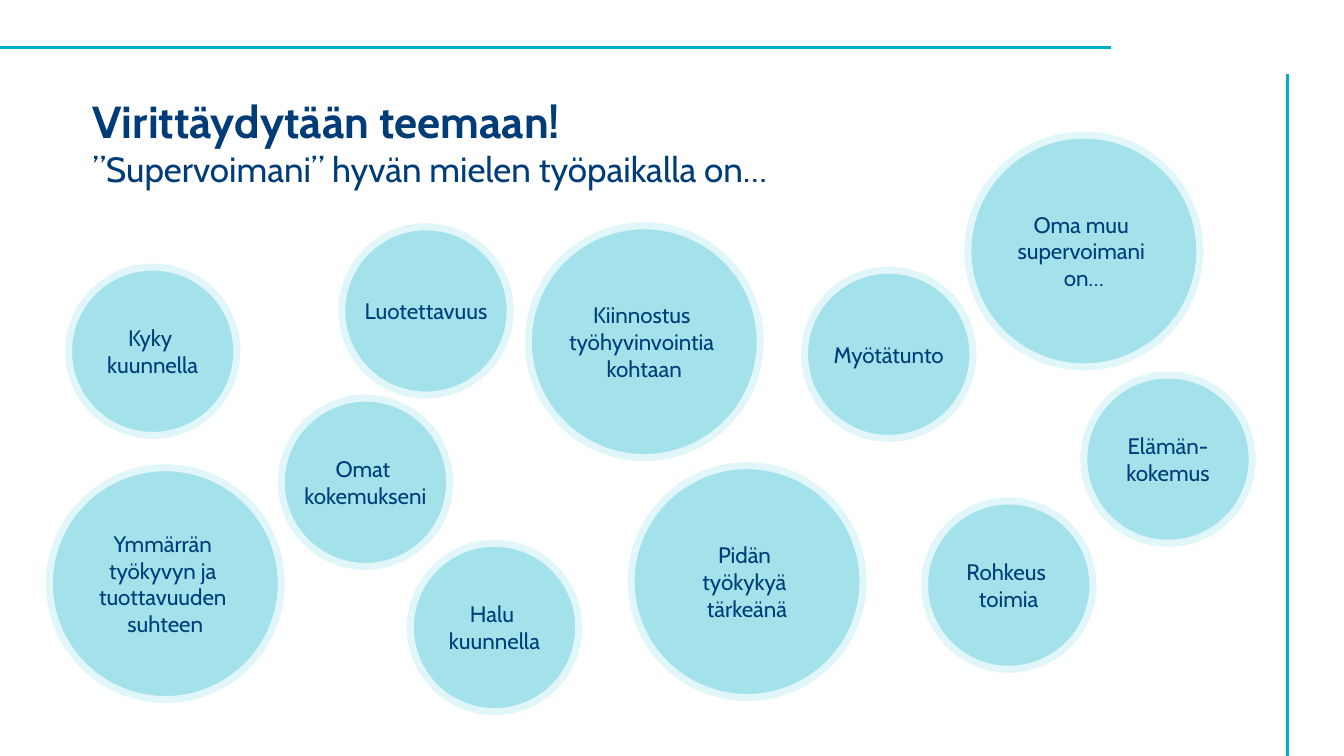
"""Build the slide of workplace superpowers shown as bubbles."""
from lxml.etree import SubElement
from pptx import Presentation
from pptx.dml.color import RGBColor
from pptx.enum.shapes import MSO_CONNECTOR, MSO_SHAPE
from pptx.enum.text import MSO_ANCHOR, PP_ALIGN
from pptx.oxml.ns import qn
from pptx.util import Inches, Pt

NAVY, TURQUOISE, AQUA, PALE = "003C78", "00B0CA", "66D0DF", "E0F6F9"
SMALL, LARGE = 1.67, 2.3


def color(hex_code):
    """Turn a hex string into a colour."""
    return RGBColor.from_string(hex_code)


def write(frame, text, sizes=(16,), bold_first=False, align=PP_ALIGN.CENTER,
          anchor=MSO_ANCHOR.MIDDLE, wrap=False):
    """Write one paragraph per line; the last size serves all further lines."""
    frame.margin_left = frame.margin_right = 0
    frame.margin_top = frame.margin_bottom = 0
    frame.word_wrap = wrap
    frame.vertical_anchor = anchor
    frame.text = text
    for index, paragraph in enumerate(frame.paragraphs):
        paragraph.alignment = align
        font = paragraph.runs[0].font
        font.name = "Cabin"
        font.size = Pt(sizes[min(index, len(sizes) - 1)])
        font.bold = bold_first and index == 0
        font.color.rgb = color(NAVY)


deck = Presentation()
deck.slide_width, deck.slide_height = Inches(13.33), Inches(7.5)
slide = deck.slides.add_slide(deck.slide_layouts[6])

for ends in [(0, 0.47, 11.02, 0.47), (12.77, 7.5, 12.77, 0.73)]:
    rule = slide.shapes.add_connector(MSO_CONNECTOR.STRAIGHT, *map(Inches, ends))
    rule.line.color.rgb = color(TURQUOISE)
    rule.line.width = Pt(1.85)
    SubElement(rule.element.spPr, qn("a:effectLst"))

heading = slide.shapes.add_textbox(Inches(0.92), Inches(1.03), Inches(11.26), Inches(0.85))
write(heading.text_frame,
      "Virittäydytään teemaan!\n”Supervoimani” hyvän mielen työpaikalla on…",
      sizes=(32, 25), bold_first=True, align=PP_ALIGN.LEFT,
      anchor=MSO_ANCHOR.BOTTOM, wrap=True)

superpowers = [
    (0.68, 2.65, SMALL, "Kyky \nkuunnella"),
    (0.49, 4.64, LARGE, "Ymmärrän \ntyökyvyn ja \ntuottavuuden \nsuhteen"),
    (3.39, 2.25, SMALL, "Luotettavuus"),
    (2.79, 3.95, SMALL, "Omat \nkokemukseni"),
    (4.07, 5.39, SMALL, "Halu \nkuunnella"),
    (5.24, 2.24, LARGE, "Kiinnostus \ntyöhyvinvointia \nkohtaan"),
    (6.26, 4.62, LARGE, "Pidän \ntyökykyä \ntärkeänä"),
    (7.98, 2.68, SMALL, "Myötätunto"),
    (9.17, 4.97, SMALL, "Rohkeus \ntoimia"),
    (10.75, 3.72, SMALL, "Elämän-\nkokemus"),
    (9.6, 1.34, LARGE, "Oma muu \nsupervoimani \non…"),
]
for left, top, diameter, superpower in superpowers:
    bubble = slide.shapes.add_shape(MSO_SHAPE.OVAL, Inches(left), Inches(top),
                                    Inches(diameter), Inches(diameter))
    bubble.shadow.inherit = False
    bubble.fill.solid()
    bubble.fill.fore_color.rgb = color(AQUA)
    fill_color = bubble.element.spPr.find(qn("a:solidFill")).find(qn("a:srgbClr"))
    SubElement(fill_color, qn("a:alpha"), val="60000")
    bubble.line.color.rgb = color(PALE)
    bubble.line.width = Pt(5)
    write(bubble.text_frame, superpower)

deck.save("out.pptx")
